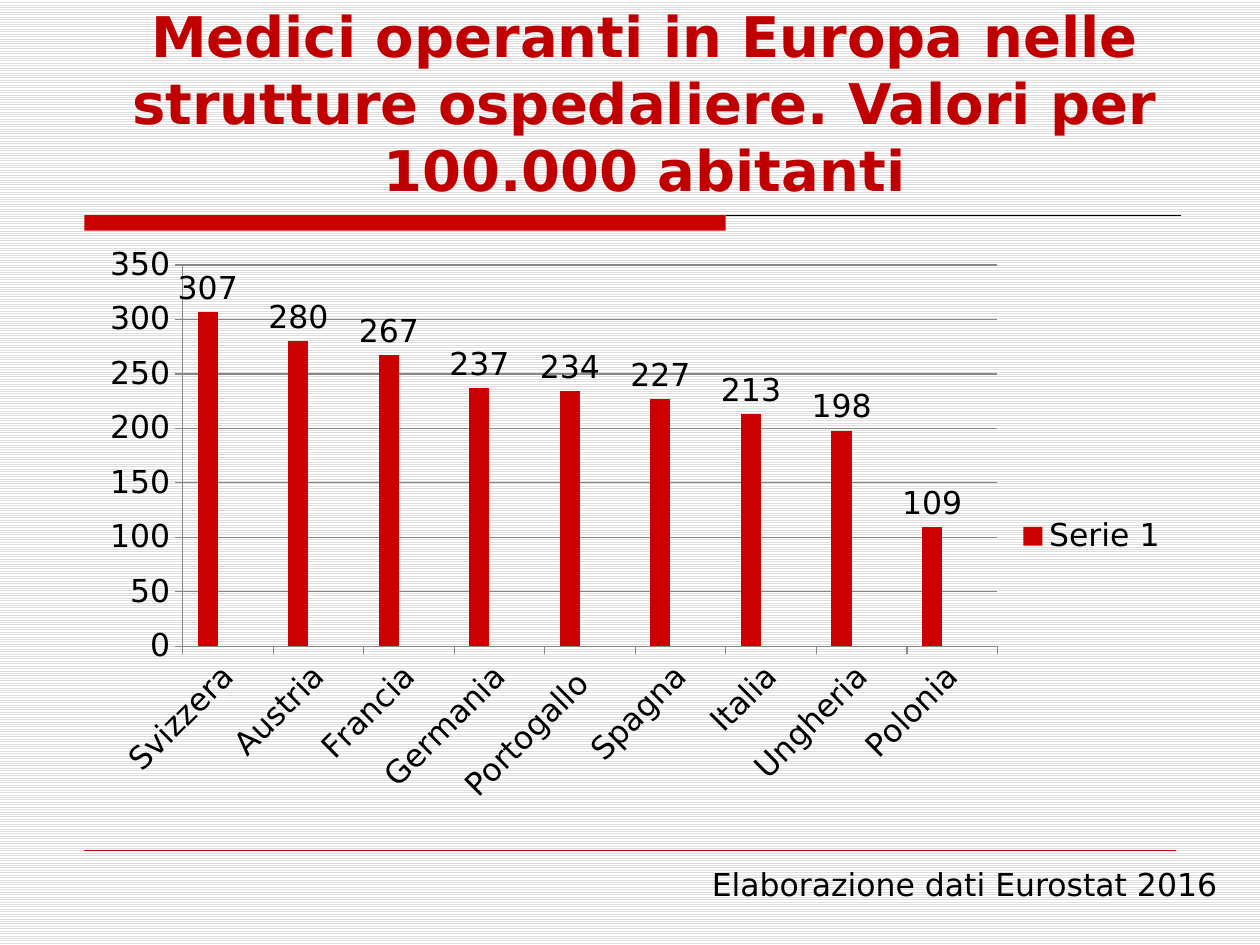
from dataclasses import dataclass

from lxml import etree
from pptx import Presentation
from pptx.chart.data import CategoryChartData
from pptx.dml.color import RGBColor
from pptx.enum.chart import XL_CHART_TYPE, XL_LABEL_POSITION, XL_LEGEND_POSITION, XL_TICK_MARK
from pptx.enum.dml import MSO_PATTERN
from pptx.enum.shapes import MSO_CONNECTOR, MSO_SHAPE
from pptx.enum.text import MSO_ANCHOR, PP_ALIGN
from pptx.oxml.ns import qn
from pptx.util import Cm, Pt

COLUMNS = XL_CHART_TYPE.COLUMN_CLUSTERED
LABEL_ABOVE = XL_LABEL_POSITION.OUTSIDE_END
LEGEND_RIGHT = XL_LEGEND_POSITION.RIGHT
TICK_OUT = XL_TICK_MARK.OUTSIDE
STRIPES = MSO_PATTERN.LIGHT_HORIZONTAL
STRAIGHT = MSO_CONNECTOR.STRAIGHT
RECTANGLE = MSO_SHAPE.RECTANGLE
TOP, BOTTOM = MSO_ANCHOR.TOP, MSO_ANCHOR.BOTTOM
LEFT, CENTER = PP_ALIGN.LEFT, PP_ALIGN.CENTER

DOCTORS = {
    "Svizzera": 307, "Austria": 280, "Francia": 267,
    "Germania": 237, "Portogallo ": 234, "Spagna": 227,
    "Italia": 213, "Ungheria": 198, "Polonia": 109,
}


@dataclass(frozen=True)
class Theme:
    font: str = "DejaVu Sans"
    title_size: int = 32
    body_size: int = 18
    red: RGBColor = RGBColor(0xCC, 0x00, 0x00)
    title_red: RGBColor = RGBColor(0xC0, 0x00, 0x00)
    black: RGBColor = RGBColor(0x00, 0x00, 0x00)
    white: RGBColor = RGBColor(0xFF, 0xFF, 0xFF)
    stripe: RGBColor = RGBColor(0xDD, 0xDD, 0xDD)
    grid: RGBColor = RGBColor(0x87, 0x87, 0x87)


class SlideBuilder:
    def __init__(self, slide, theme):
        self.slide = slide
        self.theme = theme

    def striped_background(self):
        fill = self.slide.background.fill
        fill.patterned()
        fill.pattern = STRIPES
        fill.fore_color.rgb = self.theme.stripe
        fill.back_color.rgb = self.theme.white

    def bar(self, left, top, width, height, color):
        shape = self.slide.shapes.add_shape(
            RECTANGLE, Cm(left), Cm(top), Cm(width), Cm(height))
        shape.shadow.inherit = False
        shape.fill.solid()
        shape.fill.fore_color.rgb = color
        shape.line.fill.background()

    def rule(self, left, right, top, color, width):
        line = self.slide.shapes.add_connector(
            STRAIGHT, Cm(left), Cm(top), Cm(right), Cm(top))
        line.line.color.rgb = color
        line.line.width = Pt(width)
        etree.SubElement(line._element.spPr, qn("a:effectLst"))

    def style_font(self, font, size, color, bold=False):
        font.name = self.theme.font
        font.size = Pt(size)
        font.color.rgb = color
        font.bold = bold

    def text(self, content, left, top, width, height, size, color,
             bold=False, align=LEFT, anchor=TOP, wrap=True):
        box = self.slide.shapes.add_textbox(
            Cm(left), Cm(top), Cm(width), Cm(height))
        frame = box.text_frame
        frame.word_wrap = wrap
        frame.vertical_anchor = anchor
        frame.text = content
        para = frame.paragraphs[0]
        para.alignment = align
        self.style_font(para.runs[0].font, size, color, bold)

    def column_chart(self, values, left, top, width, height, plot_area):
        theme = self.theme
        data = CategoryChartData()
        data.categories = list(values)
        data.add_series("Serie 1", list(values.values()))
        # Two empty series keep the columns left of each category's middle
        for name in ("Series 2", "Series 3"):
            data.add_series(name, [None] * len(values))
        chart = self.slide.shapes.add_chart(
            COLUMNS, Cm(left), Cm(top), Cm(width), Cm(height), data).chart
        chart.has_title = False
        self.style_font(chart.font, theme.body_size, theme.black)

        # Columns and value labels
        plot = chart.plots[0]
        plot.gap_width = 150
        plot.vary_by_categories = False
        for series, color in zip(plot.series, (theme.red, theme.red, theme.white)):
            series.format.fill.solid()
            series.format.fill.fore_color.rgb = color
        labels = plot.series[0].data_labels
        labels.show_value = True
        labels.position = LABEL_ABOVE

        # Axes and grid
        category_axis, value_axis = chart.category_axis, chart.value_axis
        value_axis.minimum_scale = 0
        value_axis.maximum_scale = 350
        value_axis.major_unit = 50
        value_axis.has_major_gridlines = True
        for axis in (category_axis, value_axis):
            axis.major_tick_mark = TICK_OUT
            self.style_font(axis.tick_labels.font, theme.body_size, theme.black)
        for part in (category_axis, value_axis, value_axis.major_gridlines):
            part.format.line.color.rgb = theme.grid
            part.format.line.width = Pt(0.75)
        category_axis._element.find(".//" + qn("a:bodyPr")).set("rot", "-2700000")

        # Legend without the empty series
        chart.has_legend = True
        chart.legend.position = LEGEND_RIGHT
        chart.legend.include_in_layout = False
        self.style_font(chart.legend.font, theme.body_size, theme.black)
        for index in (1, 2):
            entry = etree.Element(qn("c:legendEntry"))
            etree.SubElement(entry, qn("c:idx")).set("val", str(index))
            etree.SubElement(entry, qn("c:delete")).set("val", "1")
            chart.legend._element.insert(index, entry)

        self.place_plot(chart, plot_area)

    def place_plot(self, chart, plot_area):
        area = chart._chartSpace.find(".//" + qn("c:plotArea"))
        for old_layout in area.findall(qn("c:layout")):
            area.remove(old_layout)
        layout = etree.Element(qn("c:layout"))
        manual = etree.SubElement(layout, qn("c:manualLayout"))
        settings = [("layoutTarget", "inner"), ("xMode", "edge"), ("yMode", "edge")]
        settings += zip("xywh", plot_area)
        for tag, value in settings:
            etree.SubElement(manual, qn("c:" + tag)).set("val", str(value))
        area.insert(0, layout)


def main():
    theme = Theme()
    deck = Presentation()
    deck.slide_width, deck.slide_height = Cm(25.4), Cm(19.05)
    page = SlideBuilder(deck.slides.add_slide(deck.slide_layouts[6]), theme)

    # Background and rules
    page.striped_background()
    page.bar(1.7, 4.34, 12.93, 0.31, theme.red)
    page.rule(14.63, 23.8, 4.34, theme.black, 0.75)
    page.rule(1.7, 23.7, 17.15, theme.red, 0.25)

    # Title
    page.text("Medici operanti in Europa nelle strutture ospedaliere. "
              "Valori per 100.000 abitanti",
              0.3, 0.84, 25.4, 3.38, theme.title_size, theme.title_red,
              bold=True, align=CENTER, anchor=BOTTOM)

    # Chart
    page.column_chart(DOCTORS, 1.57, 4.88, 22.23, 11.86,
                      plot_area=(0.095, 0.039, 0.739, 0.648))

    # Data source
    page.text("Elaborazione dati Eurostat 2016", 14.1, 17.32, 10.82, 1.02,
              theme.body_size, theme.black, wrap=False)

    deck.save("out.pptx")


if __name__ == "__main__":
    main()
